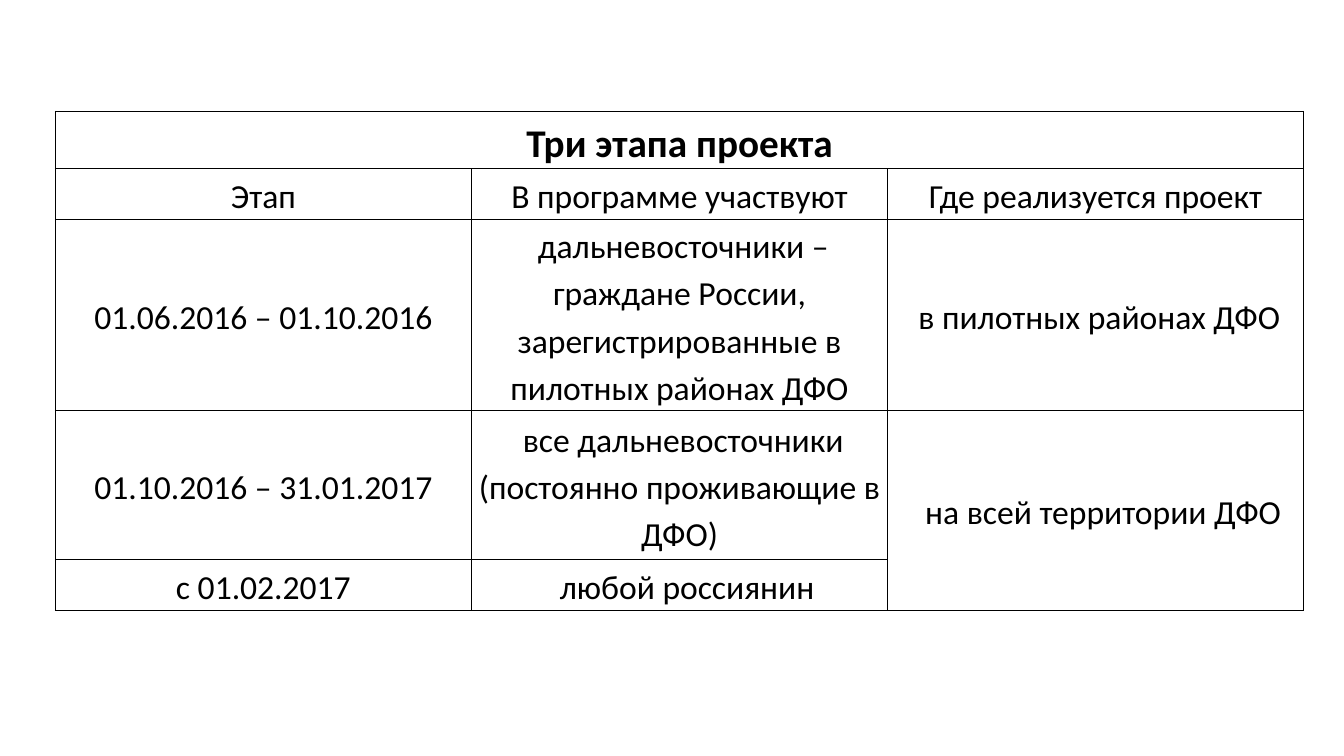
from lxml.etree import SubElement
from pptx import Presentation
from pptx.dml.color import RGBColor
from pptx.enum.text import MSO_ANCHOR, PP_ALIGN
from pptx.oxml.ns import qn
from pptx.util import Pt


def rgb(value):
    return RGBColor.from_string(value)


class SlideBuilder:
    font = "Calibri"
    ink = "000000"
    size = 24
    title_size = 28
    margin = 0.72

    def __init__(self, slide):
        self.s = slide

    def table(self, left, top, col_width, row_heights, n_cols):
        shape = self.s.shapes.add_table(
            len(row_heights), n_cols, Pt(left), Pt(top),
            Pt(col_width * n_cols), Pt(sum(row_heights)))
        table = shape.table
        table.first_row = table.horz_banding = False
        for column in table.columns:
            column.width = Pt(col_width)
        for row, height in zip(table.rows, row_heights):
            row.height = Pt(height)
        for cell in table.iter_cells():
            self.border(cell)
            cell.fill.background()
            cell.vertical_anchor = MSO_ANCHOR.MIDDLE
            cell.margin_left = cell.margin_right = Pt(self.margin)
            cell.margin_top = cell.margin_bottom = Pt(self.margin)
        return table

    def border(self, cell):
        tc_pr = cell._tc.get_or_add_tcPr()
        for side in ("lnL", "lnR", "lnT", "lnB"):
            line = SubElement(tc_pr, qn(f"a:{side}"), w=str(Pt(1)))
            fill = SubElement(line, qn("a:solidFill"))
            SubElement(fill, qn("a:srgbClr"), val=self.ink)

    def text(self, cell, text, indent=0, title=False):
        cell.text_frame.text = text
        p = cell.text_frame.paragraphs[0]
        p.alignment = PP_ALIGN.CENTER
        p.line_spacing = 1.15
        p.space_before = Pt(15 if title else 0)
        p.space_after = Pt(7.5)
        if indent:
            p._p.get_or_add_pPr().set("indent", str(Pt(indent)))
        font = p.runs[0].font
        font.name = self.font
        font.size = Pt(self.title_size if title else self.size)
        font.bold = title
        font.color.rgb = rgb(self.ink)


SPACE = 5.4  # first-line indent step
ROWS = [
    [("Три этапа проекта", 0)],
    [("Этап", 0), ("В программе участвуют", 0), ("Где реализуется проект", 0)],
    [("01.06.2016 – 01.10.2016", 0),
     ("дальневосточники – граждане России, зарегистрированные в "
      "пилотных районах ДФО", SPACE),
     ("в пилотных районах ДФО", SPACE)],
    [("01.10.2016 – 31.01.2017", 0),
     ("все дальневосточники (постоянно проживающие в ДФО)", SPACE),
     ("на всей территории ДФО", 2 * SPACE)],
    [("с 01.02.2017", 0), ("любой россиянин", 2 * SPACE)],
]


def main():
    prs = Presentation()
    prs.slide_width, prs.slide_height = Pt(960), Pt(540)
    builder = SlideBuilder(prs.slides.add_slide(prs.slide_layouts[6]))

    stages = builder.table(39.6, 79.7, 297.2, [36.5, 36.5, 118, 106.5, 36.5], 3)
    stages.cell(0, 0).merge(stages.cell(0, 2))
    stages.cell(3, 2).merge(stages.cell(4, 2))
    for i, row in enumerate(ROWS):
        for j, (text, indent) in enumerate(row):
            builder.text(stages.cell(i, j), text, indent, title=i == 0)

    prs.save("out.pptx")


if __name__ == "__main__":
    main()
